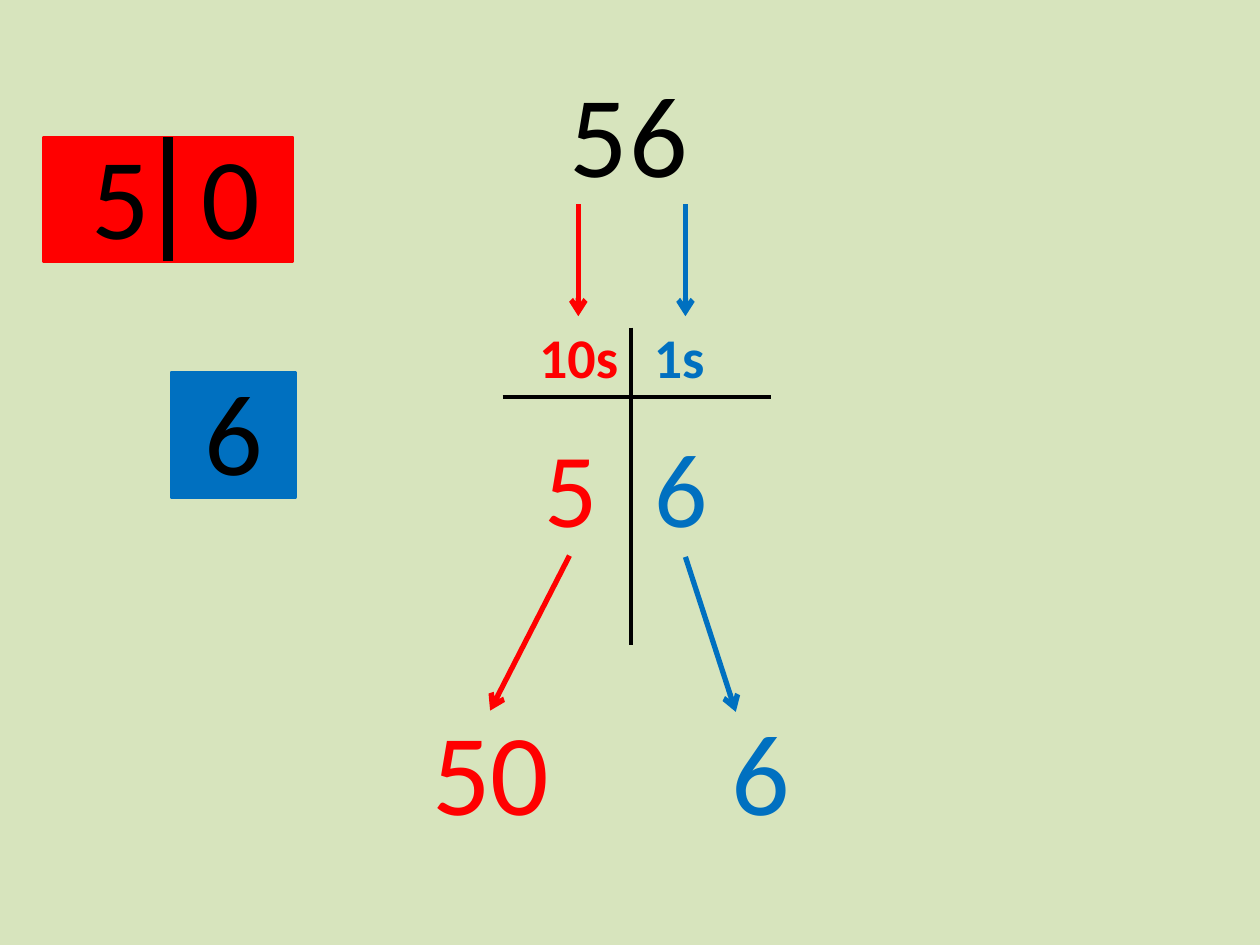
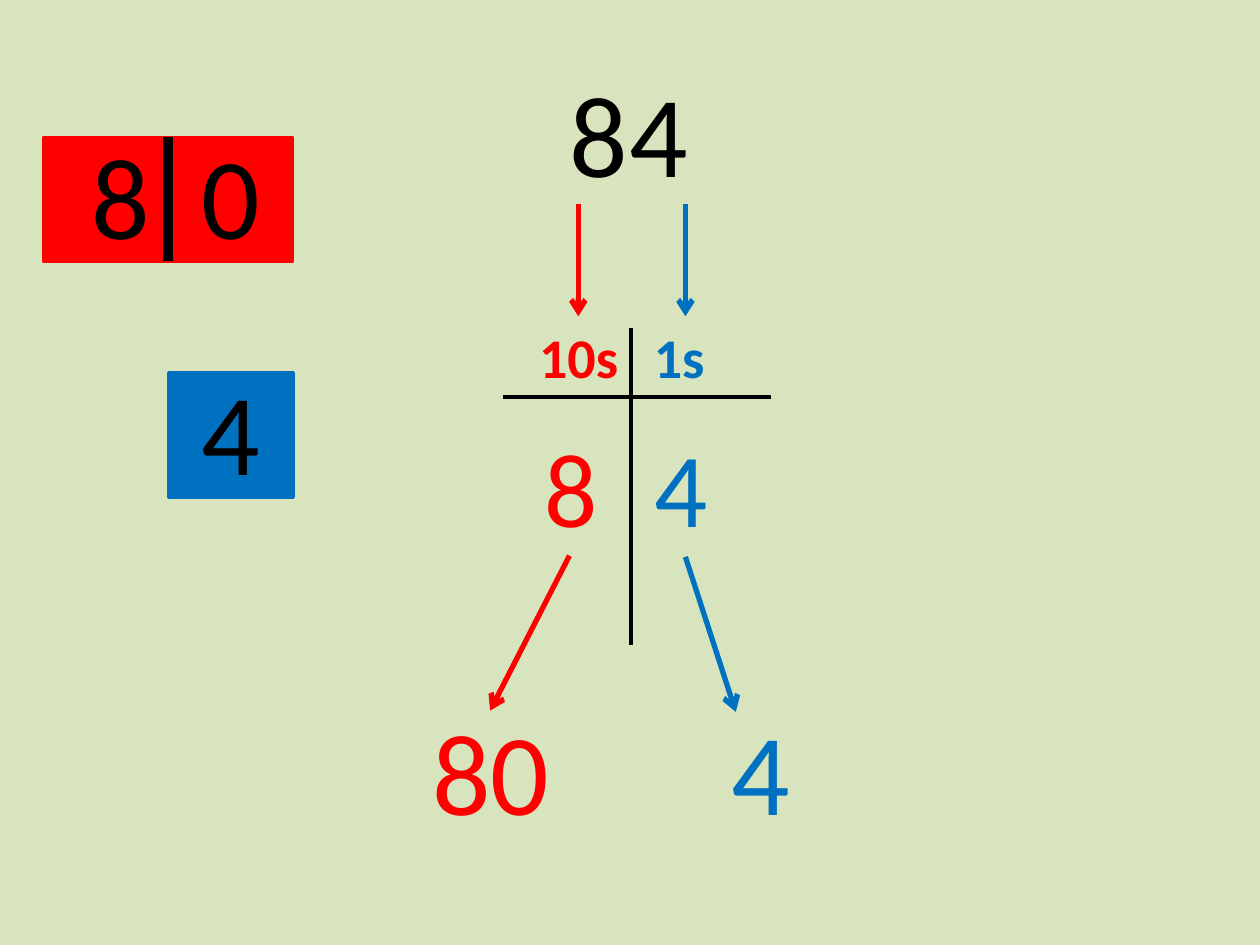
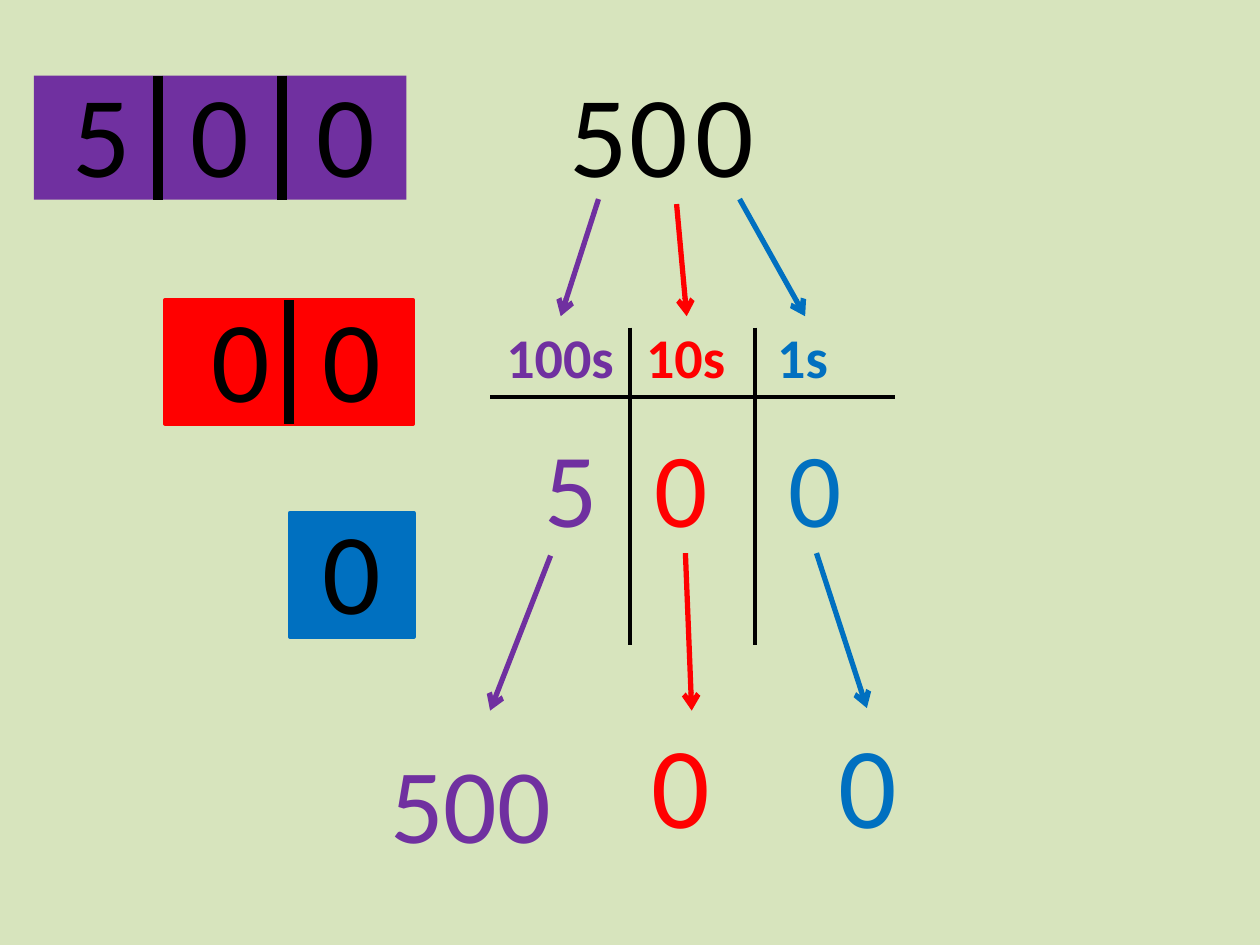
"""Build three place-value slides that split a number into hundreds, tens and ones."""
from lxml.etree import SubElement
from pptx import Presentation
from pptx.dml.color import RGBColor as Rgb
from pptx.enum.shapes import MSO_CONNECTOR as Connector, MSO_SHAPE as Shape
from pptx.enum.text import MSO_AUTO_SIZE as AutoSize, PP_ALIGN as Align
from pptx.oxml.ns import qn
from pptx.util import Inches, Pt

GRID = Inches(0.1)
COLUMNS, ROWS = 100, 75
FONT = "Calibri"
COLOURS = {"background": "D7E4BD", "ink": "000000",
           "100s": "7030A0", "10s": "FF0000", "1s": "0070C0"}
STYLES = {
    "heading": dict(height=6.4, size=32, bold=True, align=Align.LEFT, grow=True, wrap=False),
    "digit": dict(height=11.1, size=60, bold=False, align=Align.LEFT, grow=True, wrap=True),
    "number": dict(height=12.9, size=66, bold=False, align=Align.CENTER, grow=False, wrap=True),
    "hundreds": dict(height=17.2, size=60.4, bold=False, align=Align.CENTER, grow=False, wrap=True),
}
NUMBER_WIDTH, DIGIT_WIDTH = 12.7, 6
NUMBER_LEFTS = [41.2, 45.9, 51.2]
NUMBER_TOP, HEADING_TOP, DIGIT_TOP = 4.4, 25.1, 33
RULE_TOP, RULE_MIDDLE, RULE_BOTTOM = 26, 31.5, 51.2
CARD_CELL = 9.85
CARD_CENTRES = {1: [4.95], 2: [6.05, 14.85], 3: [5.35, 14.75, 24.75]}

TENS_AND_ONES = dict(
    uprights=[50.1], crossbar=(39.9, 61.2),
    headings=[(41.8, 8.4), (50.9, 6.1)],
    digits=[42.2, 51],
    parts=[(32.6, 55.1, NUMBER_WIDTH, "number"), (54, 55.1, NUMBER_WIDTH, "number")],
    arrows_in=[(45.9, 16.2, 45.9, 25.1), (54.4, 16.2, 54.4, 25.1)],
    arrows_out=[(45.2, 44.1, 38.9, 56.4), (54.4, 44.2, 58.4, 56.5)])
HUNDREDS_TENS_ONES = dict(
    uprights=[50, 59.9], crossbar=(38.9, 71),
    headings=[(39.2, 10.6), (50.3, 8.4), (60.7, 6.1)],
    digits=[42.2, 51, 61.6],
    parts=[(29.5, 58.1, 15.7, "hundreds"), (47.7, 56.1, NUMBER_WIDTH, "number"),
           (62.5, 56.1, NUMBER_WIDTH, "number")],
    arrows_in=[(47.5, 15.8, 44.5, 25.1), (53.7, 16.2, 54.5, 25.1), (58.7, 15.8, 63.9, 25.1)],
    arrows_out=[(43.7, 44.1, 38.9, 56.4), (54.4, 43.9, 54.9, 56.4), (64.8, 43.9, 68.8, 56.2)])
EXAMPLES = [
    ("56", TENS_AND_ONES, [(3.5, 10.9), (13.6, 29.6)]),
    ("84", TENS_AND_ONES, [(3.5, 10.9), (13.4, 29.6)]),
    ("500", HUNDREDS_TENS_ONES, [(2.7, 6), (13.1, 23.8), (23, 40.7)]),
]


def write(slide, text, left, top, width, style, colour):
    look = STYLES[style]
    box = [round(n * GRID) for n in (left, top, width, look["height"])]
    frame = slide.shapes.add_textbox(*box).text_frame
    frame.text = text
    frame.word_wrap = look["wrap"]
    frame.auto_size = AutoSize.SHAPE_TO_FIT_TEXT if look["grow"] else AutoSize.NONE
    paragraph = frame.paragraphs[0]
    paragraph.alignment = look["align"]
    font = paragraph.runs[0].font
    font.name, font.size, font.bold = FONT, Pt(look["size"]), look["bold"]
    font.color.rgb = Rgb.from_string(COLOURS[colour])


def rule(slide, ends, colour, weight, arrow=False):
    stroke = slide.shapes.add_connector(Connector.STRAIGHT, *[round(n * GRID) for n in ends])
    stroke.line.color.rgb = Rgb.from_string(COLOURS[colour])
    stroke.line.width = Pt(weight)
    if arrow:
        SubElement(stroke.line._get_or_add_ln(), qn("a:tailEnd"), type="arrow")
    SubElement(stroke._element.spPr, qn("a:effectLst"))


deck = Presentation()
deck.slide_width, deck.slide_height = COLUMNS * GRID, ROWS * GRID

for number, layout, cards in EXAMPLES:
    slide = deck.slides.add_slide(deck.slide_layouts[6])
    slide.background.fill.solid()
    slide.background.fill.fore_color.rgb = Rgb.from_string(COLOURS["background"])

    for x in layout["uprights"]:
        rule(slide, (x, RULE_TOP, x, RULE_BOTTOM), "ink", 2.25)
    start, end = layout["crossbar"]
    rule(slide, (start, RULE_MIDDLE, end, RULE_MIDDLE), "ink", 2.25)

    for i, digit in enumerate(number):
        places = len(number) - i
        value = 10 ** (places - 1)
        heading = f"{value}s"
        part = str(int(digit) * value)
        heading_left, heading_width = layout["headings"][i]
        part_left, part_top, part_width, part_style = layout["parts"][i]

        write(slide, digit, NUMBER_LEFTS[i], NUMBER_TOP, NUMBER_WIDTH, "number", "ink")
        write(slide, heading, heading_left, HEADING_TOP, heading_width, "heading", heading)
        write(slide, digit, layout["digits"][i], DIGIT_TOP, DIGIT_WIDTH, "digit", heading)
        write(slide, part, part_left, part_top, part_width, part_style, heading)
        rule(slide, layout["arrows_in"][i], heading, 3, arrow=True)
        rule(slide, layout["arrows_out"][i], heading, 3, arrow=True)

        card_left, card_top = cards[i]
        card_box = (card_left, card_top, places * CARD_CELL, CARD_CELL)
        card = slide.shapes.add_shape(Shape.RECTANGLE, *[round(n * GRID) for n in card_box])
        card.shadow.inherit = False
        card.fill.solid()
        card.fill.fore_color.rgb = Rgb.from_string(COLOURS[heading])
        if places < 3:
            card.line.color.rgb = Rgb.from_string(COLOURS[heading])
            card.line.width = Pt(2)
        else:
            card.line.fill.background()
        for cell in range(1, places):
            x = card_left + cell * CARD_CELL
            rule(slide, (x, card_top, x, card_top + CARD_CELL), "ink", 6)
        for centre, card_digit in zip(CARD_CENTRES[places], part.zfill(places)):
            write(slide, card_digit, card_left + centre - NUMBER_WIDTH / 2, card_top - 1.55,
                  NUMBER_WIDTH, "number", "ink")

deck.save("out.pptx")
